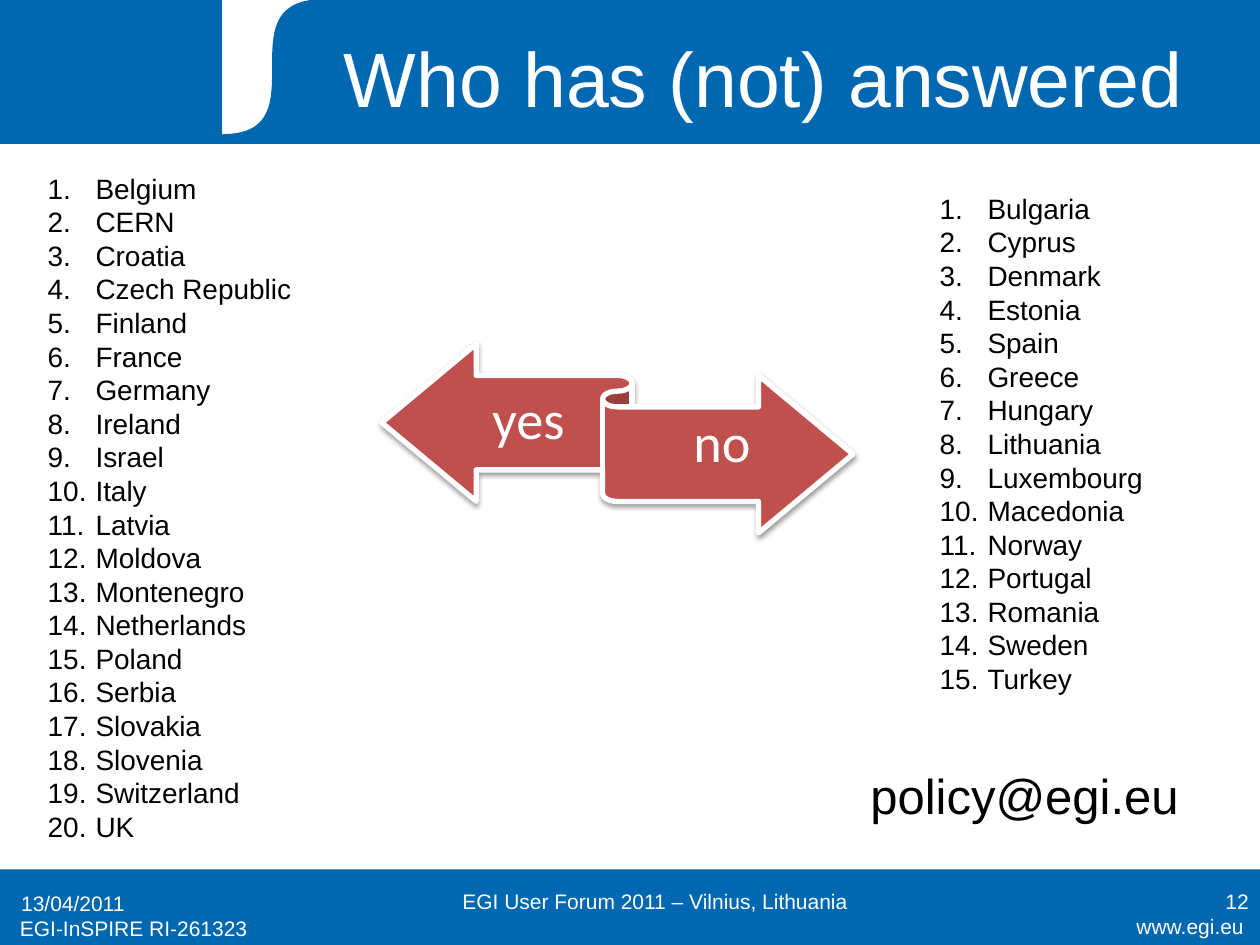
from dataclasses import dataclass

from lxml.etree import SubElement
from pptx import Presentation
from pptx.dml.color import RGBColor
from pptx.enum.shapes import MSO_SHAPE as Preset
from pptx.enum.text import MSO_ANCHOR as Anchor, PP_ALIGN as Align
from pptx.oxml.ns import qn
from pptx.util import Inches, Pt

WIDTH, HEIGHT = Inches(10), Inches(7.5)
COLORS = {"blue": "0067B1", "white": "FFFFFF", "red": "C0504D", "black": "000000"}
CURVE_STEPS = 40

YES_COUNTRIES = (
    "Belgium", "CERN", "Croatia", "Czech Republic", "Finland", "France", "Germany",
    "Ireland", "Israel", "Italy", "Latvia", "Moldova", "Montenegro", "Netherlands",
    "Poland", "Serbia", "Slovakia", "Slovenia", "Switzerland", "UK",
)
NO_COUNTRIES = (
    "Bulgaria", "Cyprus", "Denmark", "Estonia", "Spain", "Greece", "Hungary",
    "Lithuania", "Luxembourg", "Macedonia", "Norway", "Portugal", "Romania",
    "Sweden", "Turkey",
)


@dataclass(frozen=True)
class Area:
    left: float
    top: float
    width: float
    height: float

    def emu(self) -> tuple:
        return (across(self.left), down(self.top), across(self.width), down(self.height))


@dataclass(frozen=True)
class Label:
    area: Area
    lines: tuple
    size: float = 12
    color: str = "white"
    align: Align = Align.LEFT
    anchor: Anchor = Anchor.TOP
    font: str = "Arial"
    insets: tuple = (0.1, 0.05, 0.1, 0.05)
    spacing: float = 1.0
    numbered: bool = False


def across(percent: float) -> int:
    return round(WIDTH * percent / 100)


def down(percent: float) -> int:
    return round(HEIGHT * percent / 100)


def rgb(name: str) -> RGBColor:
    return RGBColor.from_string(COLORS[name])


def paint(shape, fill: str, outline: str | None = None, weight: float = 0.75) -> None:
    shape.shadow.inherit = False
    shape.fill.solid()
    shape.fill.fore_color.rgb = rgb(fill)
    if outline:
        shape.line.color.rgb = rgb(outline)
        shape.line.width = Pt(weight)
    else:
        shape.line.fill.background()


def draw_panel(slide, area: Area, fill: str, outline: str | None = None) -> None:
    paint(slide.shapes.add_shape(Preset.RECTANGLE, *area.emu()), fill, outline)


def draw_swoosh(slide, area: Area, crest: float) -> None:
    left, right = area.left, area.left + area.width
    bottom = area.top + area.height
    outline = [(right, bottom), (left, bottom)]
    for step in range(1, CURVE_STEPS + 1):
        t = step / CURVE_STEPS
        pull_right = 3 * t * (1 - t) ** 2 + t ** 3
        pull_up = 3 * t ** 2 * (1 - t) + t ** 3
        outline.append((left + (crest - left) * pull_right, bottom - area.height * pull_up))
    builder = slide.shapes.build_freeform(across(right), down(area.top))
    builder.add_line_segments([(across(x), down(y)) for x, y in outline], close=True)
    paint(builder.convert_to_shape(), "blue", "blue")


def draw_ribbon(slide, area: Area) -> None:
    ribbon = slide.shapes.add_shape(Preset.LEFT_RIGHT_RIBBON, *area.emu())
    paint(ribbon, "red", "white", 3)
    effects = ribbon._element.spPr.find(qn("a:effectLst"))
    shadow = SubElement(effects, qn("a:outerShdw"), blurRad=str(Pt(3.1)),
                        dist=str(Pt(1.6)), dir="5400000", rotWithShape="0")
    tint = SubElement(shadow, qn("a:srgbClr"), val=COLORS["black"])
    SubElement(tint, qn("a:alpha"), val="38000")


def number(paragraph) -> None:
    properties = paragraph._p.get_or_add_pPr()
    properties.set("marL", str(Inches(0.38)))
    properties.set("indent", str(-Inches(0.38)))
    SubElement(properties, qn("a:buFont"), typeface="Arial")
    SubElement(properties, qn("a:buAutoNum"), type="arabicPeriod")


def write(slide, label: Label) -> None:
    frame = slide.shapes.add_textbox(*label.area.emu()).text_frame
    frame.word_wrap = True
    frame.vertical_anchor = label.anchor
    (frame.margin_left, frame.margin_top,
     frame.margin_right, frame.margin_bottom) = map(Inches, label.insets)
    for index, line in enumerate(label.lines):
        paragraph = frame.add_paragraph() if index else frame.paragraphs[0]
        paragraph.alignment = label.align
        paragraph.line_spacing = label.spacing
        if label.numbered:
            number(paragraph)
        run = paragraph.add_run()
        run.text = line
        run.font.size = Pt(label.size)
        run.font.name = label.font
        run.font.color.rgb = rgb(label.color)


def country_list(area: Area, countries: tuple) -> Label:
    return Label(area, countries, size=16, color="black", numbered=True)


def answer(area: Area, word: str) -> Label:
    return Label(area, (word,), size=31, align=Align.CENTER, anchor=Anchor.MIDDLE,
                 font="Calibri", insets=(0, 0.12, 0, 0.13), spacing=0.9)


def footer(area: Area, text: str, align: Align) -> Label:
    return Label(area, (text,), align=align, anchor=Anchor.MIDDLE)


def main() -> None:
    deck = Presentation()
    deck.slide_width, deck.slide_height = WIDTH, HEIGHT
    slide = deck.slides.add_slide(deck.slide_layouts[6])

    swoosh = Area(17.7, 0, 19.7, 14.27)
    draw_panel(slide, Area(0, 92, 100, 8), "blue")
    draw_panel(slide, Area(0, 0, 100, 15.2), "blue", "blue")
    draw_panel(slide, swoosh, "white", "white")
    draw_swoosh(slide, swoosh, crest=25.6)
    draw_ribbon(slide, Area(30.3, 36.4, 37.4, 20))

    labels = (
        Label(Area(83.9, 96, 15.8, 4.13), ("www.egi.eu",), align=Align.RIGHT),
        Label(Area(0.6, 96.27, 25, 4.13), ("EGI-InSPIRE RI-261323",)),
        Label(Area(23.2, 1.73, 74.8, 12.67), ("Who has (not) answered",), size=44,
              align=Align.CENTER, anchor=Anchor.MIDDLE),
        answer(Area(35.8, 39.87, 12.3, 9.73), "yes"),
        answer(Area(50, 42.27, 14.6, 9.73), "no"),
        footer(Area(0.7, 92.93, 23.3, 5.33), "13/04/2011", Align.LEFT),
        footer(Area(76.8, 92.67, 23.3, 5.33), "12", Align.RIGHT),
        footer(Area(31.9, 92.67, 40.2, 5.33),
               "EGI User Forum 2011 – Vilnius, Lithuania", Align.CENTER),
        country_list(Area(2.8, 17.47, 29.1, 75.33), YES_COUNTRIES),
        country_list(Area(73.6, 19.6, 22, 55.2), NO_COUNTRIES),
        Label(Area(68.1, 80.4, 27.6, 7.6), ("policy@egi.eu",), size=28, color="black"),
    )
    for label in labels:
        write(slide, label)

    deck.save("out.pptx")


if __name__ == "__main__":
    main()
